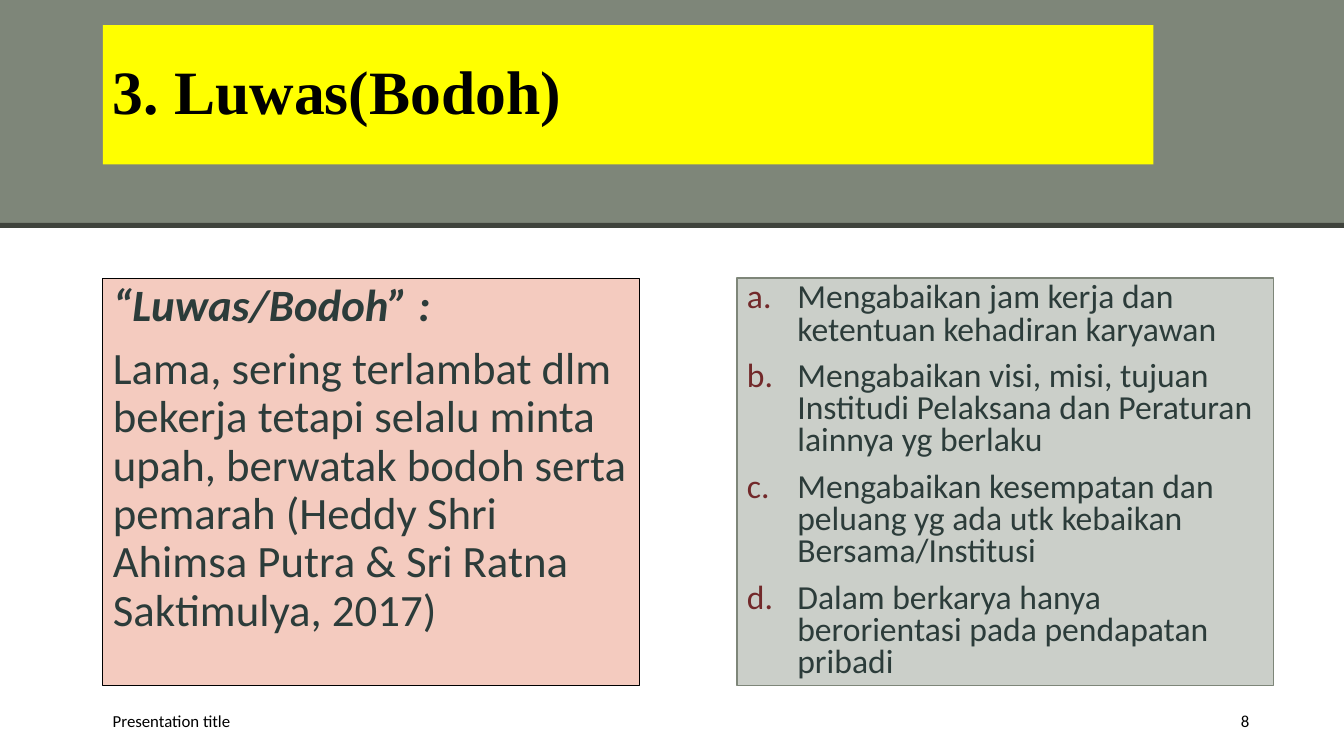
from dataclasses import dataclass

from lxml import etree
from pptx import Presentation
from pptx.dml.color import RGBColor
from pptx.enum.shapes import MSO_SHAPE
from pptx.enum.text import MSO_ANCHOR, PP_ALIGN
from pptx.oxml.ns import qn
from pptx.util import Inches, Pt

RECTANGLE = MSO_SHAPE.RECTANGLE
TOP, MIDDLE = MSO_ANCHOR.TOP, MSO_ANCHOR.MIDDLE
LEFT, RIGHT = PP_ALIGN.LEFT, PP_ALIGN.RIGHT


@dataclass(frozen=True)
class Theme:
    band: str = "7E8679"
    rule: str = "3F433C"
    title_fill: str = "FFFF00"
    definition_fill: str = "F4CBBF"
    traits_fill: str = "CBCFC9"
    black: str = "000000"
    body_text: str = "2C3C3A"
    marker: str = "72292A"
    title_font: str = "Times New Roman"
    body_font: str = "Calibri"
    title_size: int = 44
    definition_size: int = 32
    traits_size: int = 24
    footer_size: int = 12


theme = Theme()

presentation = Presentation()
presentation.slide_width = Inches(13.33)
presentation.slide_height = Inches(7.5)
slide = presentation.slides.add_slide(presentation.slide_layouts[6])


def add_panel(left, top, width, height, fill, line=None, line_width=1):
    shape = slide.shapes.add_shape(
        RECTANGLE, Inches(left), Inches(top), Inches(width), Inches(height))
    shape.shadow.inherit = False
    shape.fill.solid()
    shape.fill.fore_color.rgb = RGBColor.from_string(fill)
    if line:
        shape.line.color.rgb = RGBColor.from_string(line)
        shape.line.width = Pt(line_width)
    else:
        shape.line.fill.background()
    return shape


def write_paragraphs(shape, texts, color, formats, anchor=TOP, align=LEFT,
                     line_spacing=1.0, lettered=False):
    """Fill the shape with one paragraph per text; formats holds font values."""
    frame = shape.text_frame
    frame.word_wrap = True
    frame.vertical_anchor = anchor
    for index, text in enumerate(texts):
        paragraph = frame.paragraphs[0] if index == 0 else frame.add_paragraph()
        paragraph.text = text
        paragraph.alignment = align
        paragraph.line_spacing = line_spacing
        paragraph.space_before = Pt(10 if index else 0)
        if lettered:
            properties = paragraph._p.get_or_add_pPr()
            properties.set("marL", str(Inches(0.5)))
            properties.set("indent", str(Inches(-0.5)))
            marker_color = etree.SubElement(properties, qn("a:buClr"))
            etree.SubElement(marker_color, qn("a:srgbClr"), val=theme.marker)
            etree.SubElement(properties, qn("a:buAutoNum"), type="alphaLcPeriod")
        font = paragraph.runs[0].font
        font.color.rgb = RGBColor.from_string(color)
        for name, value in formats.items():
            setattr(font, name, value)


# Header
add_panel(0, 0, 13.33, 2.24, theme.band)
add_panel(0, 2.21, 13.33, 0.05, theme.rule)
title = add_panel(1.02, 0.25, 10.42, 1.38, theme.title_fill)
write_paragraphs(
    title, ["3. Luwas(Bodoh)"], theme.black,
    {"name": theme.title_font, "size": Pt(theme.title_size), "bold": True},
    anchor=MIDDLE, line_spacing=0.9)

# Definition
definition = add_panel(1.02, 2.76, 5.32, 4.04, theme.definition_fill,
                       theme.black, 0.75)
write_paragraphs(
    definition,
    ["“Luwas/Bodoh” :",
     "Lama, sering terlambat dlm bekerja tetapi selalu minta upah, berwatak "
     "bodoh serta pemarah (Heddy Shri Ahimsa Putra & Sri Ratna Saktimulya, 2017)"],
    theme.body_text,
    {"name": theme.body_font, "size": Pt(theme.definition_size)},
    line_spacing=0.9)
heading_font = definition.text_frame.paragraphs[0].runs[0].font
heading_font.bold = heading_font.italic = True

# Lettered traits
traits = add_panel(7.31, 2.76, 5.32, 4.04, theme.traits_fill, theme.band)
write_paragraphs(
    traits,
    ["Mengabaikan jam kerja dan ketentuan kehadiran karyawan",
     "Mengabaikan visi, misi, tujuan Institudi Pelaksana dan Peraturan "
     "lainnya yg berlaku",
     "Mengabaikan kesempatan dan peluang yg ada utk kebaikan Bersama/Institusi",
     "Dalam berkarya hanya berorientasi pada pendapatan pribadi"],
    theme.body_text,
    {"name": theme.body_font, "size": Pt(theme.traits_size)},
    line_spacing=0.8, lettered=True)

# Footer
for text, left, width, align in [("Presentation title", 1.02, 4.5, LEFT),
                                 ("8", 11.63, 0.86, RIGHT)]:
    footer = slide.shapes.add_textbox(
        Inches(left), Inches(6.95), Inches(width), Inches(0.4))
    write_paragraphs(
        footer, [text], theme.black,
        {"name": theme.body_font, "size": Pt(theme.footer_size)},
        anchor=MIDDLE, align=align)

presentation.save("out.pptx")
